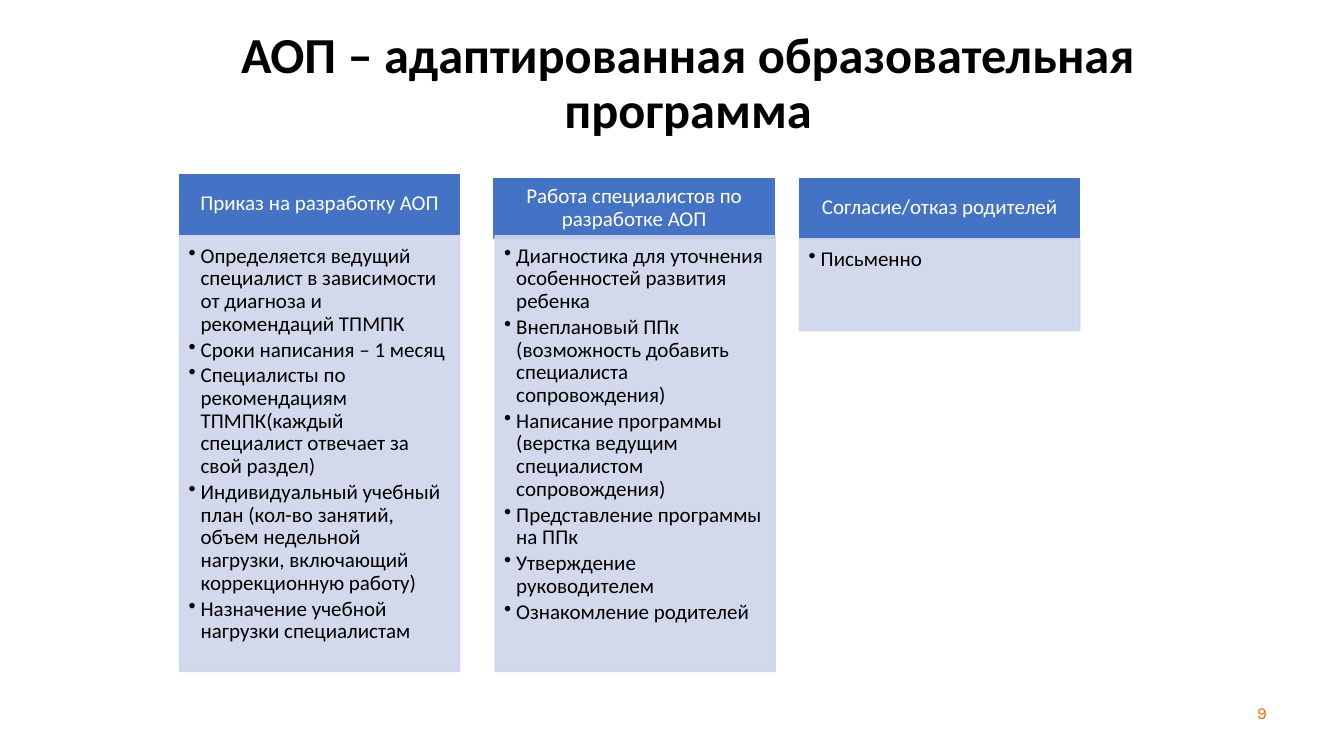
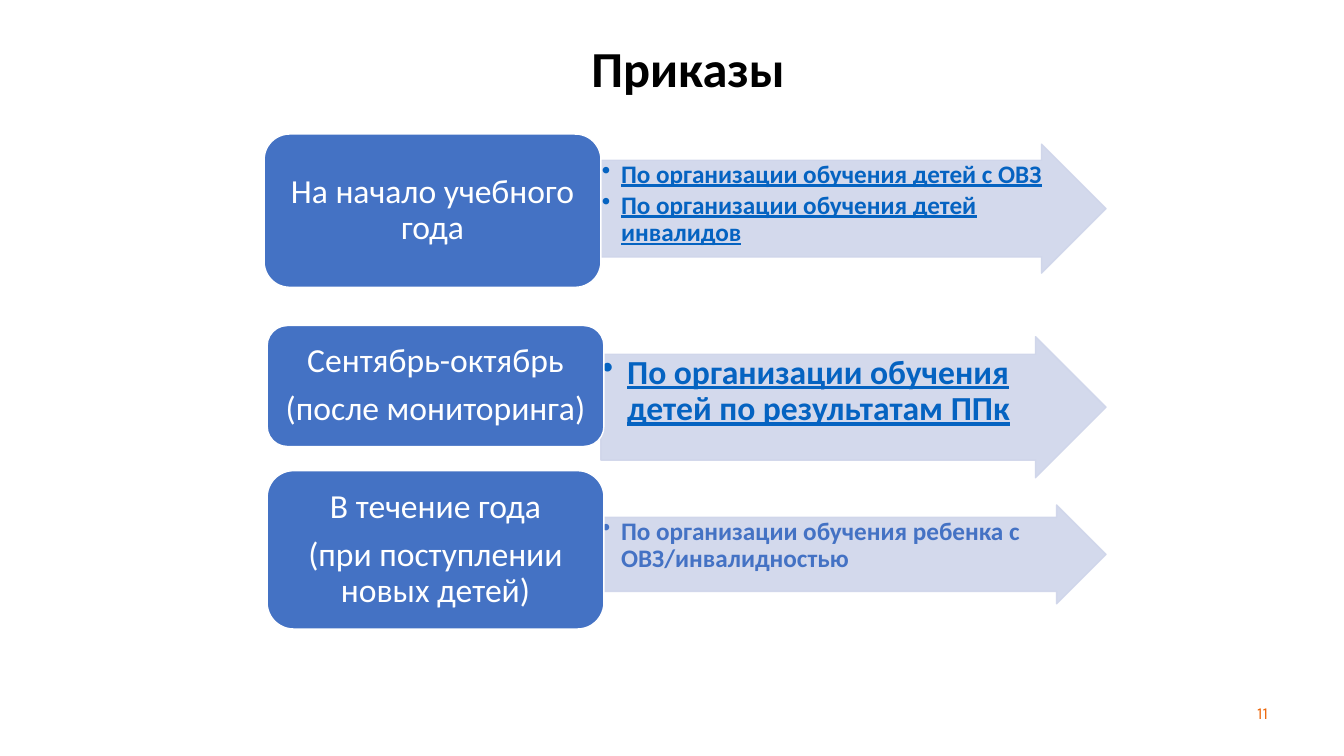
from dataclasses import dataclass

from lxml.etree import SubElement
from pptx import Presentation
from pptx.dml.color import RGBColor
from pptx.enum.shapes import MSO_SHAPE
from pptx.enum.text import MSO_ANCHOR, PP_ALIGN
from pptx.oxml.ns import qn
from pptx.util import Inches, Pt


@dataclass(frozen=True)
class Theme:
    """Colours, fonts and type sizes of the deck."""
    blue: str = "4472C4"
    pale: str = "CFD5EA"
    link: str = "0563C1"
    white: str = "FFFFFF"
    black: str = "000000"
    orange: str = "EC670B"
    font: str = "Calibri"
    page_font: str = "Karla"
    title: int = 36
    large: int = 24
    mid: int = 18
    small: int = 15
    page: int = 12


T = Theme()
COL_W, HEAD_H = 2.78, 0.59
ARROW_X, ARROW_W, BOX_W = 5.96, 5.01, 3.34

COLUMNS = [
    ((7.93, 1.77), (7.93, 2.37, 0.91), "Согласие/отказ родителей", ["Письменно"]),
    ((1.78, 1.73), (1.78, 2.34, 4.32), "Приказ на разработку АОП", [
        "Определяется ведущий специалист в зависимости от диагноза и рекомендаций ТПМПК",
        "Сроки написания – 1 месяц",
        "Специалисты по рекомендациям ТПМПК(каждый специалист отвечает за свой раздел)",
        "Индивидуальный учебный план (кол-во занятий, объем недельной нагрузки, "
        "включающий коррекционную работу)",
        "Назначение учебной нагрузки специалистам",
    ]),
    ((4.9, 1.77), (4.91, 2.34, 4.32), "Работа специалистов по разработке АОП", [
        "Диагностика для уточнения особенностей развития ребенка",
        "Внеплановый ППк (возможность добавить специалиста сопровождения)",
        "Написание программы (верстка ведущим специалистом сопровождения)",
        "Представление программы на ППк",
        "Утверждение руководителем",
        "Ознакомление родителей",
    ]),
]

ORDERS = [
    ((2.62, 1.33, 1.52), ["На начало учебного года"], (1.43, 1.28),
     ["По организации обучения детей с ОВЗ",
      "По организации обучения детей инвалидов"], T.mid, 0.19, True),
    ((2.65, 3.23, 1.2), ["Сентябрь-октябрь", "(после мониторинга)"], (3.34, 1.4),
     ["По организации обучения детей по результатам ППк"], T.large, 0.25, True),
    ((2.65, 4.67, 1.57), ["В течение года", "(при поступлении новых детей)"], (5.01, 0.98),
     ["По организации обучения ребенка с ОВЗ/инвалидностью"], T.mid, 0.19, False),
]


def write(shape, lines, size, color, font=T.font, bold=None, line=None,
          pad=(0.1, 0.05, 0.1, 0.05), align=PP_ALIGN.LEFT, mid=False,
          gap=0, hang=0, space=0.9, lined=None):
    """Fill a shape with paragraphs of one style, bulleted if hang is set."""
    frame = shape.text_frame
    frame.word_wrap = True
    frame.vertical_anchor = MSO_ANCHOR.MIDDLE if mid else MSO_ANCHOR.TOP
    sides = [Inches(p) for p in pad]
    frame.margin_left, frame.margin_top, frame.margin_right, frame.margin_bottom = sides
    for i, text in enumerate(lines):
        para = frame.add_paragraph() if i else frame.paragraphs[0]
        para.text = text
        if hang:
            props = para._p.get_or_add_pPr()
            props.set("marL", str(Inches(hang)))
            props.set("indent", str(-Inches(hang)))
            SubElement(props, qn("a:buChar")).set("char", "•")
        para.alignment = align
        para.line_spacing = space
        para.space_after = Pt(round(size * gap, 2))
        face = para.font
        face.name, face.size, face.bold, face.underline = font, Pt(size), bold, lined
        face.color.rgb = RGBColor.from_string(color)


def draw(slide, kind, at, fill, edge, alpha=None):
    """Add a filled preset shape, with an alpha percent if given."""
    shape = slide.shapes.add_shape(kind, *[Inches(v) for v in at])
    shape.shadow.inherit = False
    shape.fill.solid()
    shape.fill.fore_color.rgb = RGBColor.from_string(fill)
    shape.line.color.rgb = RGBColor.from_string(edge)
    shape.line.width = Pt(1)
    if alpha:
        for color in shape._element.spPr.iter(qn("a:srgbClr")):
            SubElement(color, qn("a:alpha")).set("val", str(alpha * 1000))
    return shape


def label(slide, at, text, size, color, **style):
    """Add a text box with one line of text."""
    box = slide.shapes.add_textbox(*[Inches(v) for v in at])
    write(box, [text], size, color, **style)


def start(deck, title, height, page):
    """Add a blank slide with its title and page number."""
    slide = deck.slides.add_slide(deck.slide_layouts[6])
    label(slide, (12.37, 6.92, 0.44, 0.36), page, T.page, T.orange,
          font=T.page_font, pad=(0.1, 0.05, 0, 0.05), space=1)
    label(slide, (1.68, 0.1, 10.24, height), title, T.title, T.black, bold=True,
          pad=(0.15, 0.1, 0.1, 0.1), align=PP_ALIGN.CENTER, mid=True)
    return slide


def column(slide, head, body, title, items):
    """Draw a headed column with a bullet list."""
    top = draw(slide, MSO_SHAPE.RECTANGLE, (*head, COL_W, HEAD_H), T.blue, T.blue)
    write(top, [title], T.small, T.white, pad=(0.12, 0.07, 0.12, 0.07),
          align=PP_ALIGN.CENTER, mid=True, gap=0.35)
    x, y, height = body
    panel = draw(slide, MSO_SHAPE.RECTANGLE, (x, y, COL_W, height), T.pale, T.pale, 90)
    write(panel, items, T.small, T.black, pad=(0.09, 0.09, 0.12, 0.13), gap=0.15, hang=0.12)


def order(slide, box, when, span, items, size, hang, lined):
    """Draw an arrow of bullets led by a rounded box."""
    y, height = span
    arrow = draw(slide, MSO_SHAPE.RIGHT_ARROW, (ARROW_X, y, ARROW_W, height),
                 T.pale, T.pale, 90)
    arrow.adjustments[0], arrow.adjustments[1] = 0.75, 0.5
    write(arrow, items, size, T.link if lined else T.blue, bold=True,
          pad=(0.01,) * 4, gap=0.15, hang=hang, lined=lined or None)
    x, y, height = box
    card = draw(slide, MSO_SHAPE.ROUNDED_RECTANGLE, (x, y, BOX_W, height), T.blue, T.white)
    write(card, when, T.large, T.white, align=PP_ALIGN.CENTER, mid=True, gap=0.35)


def main():
    """Build both slides and save the deck."""
    deck = Presentation()
    deck.slide_width, deck.slide_height = Inches(13.33), Inches(7.5)
    slide = start(deck, "АОП – адаптированная образовательная программа", 1.48, "9")
    for row in COLUMNS:
        column(slide, *row)
    slide = start(deck, "Приказы", 1.21, "11")
    for row in ORDERS:
        order(slide, *row)
    deck.save("out.pptx")


if __name__ == "__main__":
    main()
